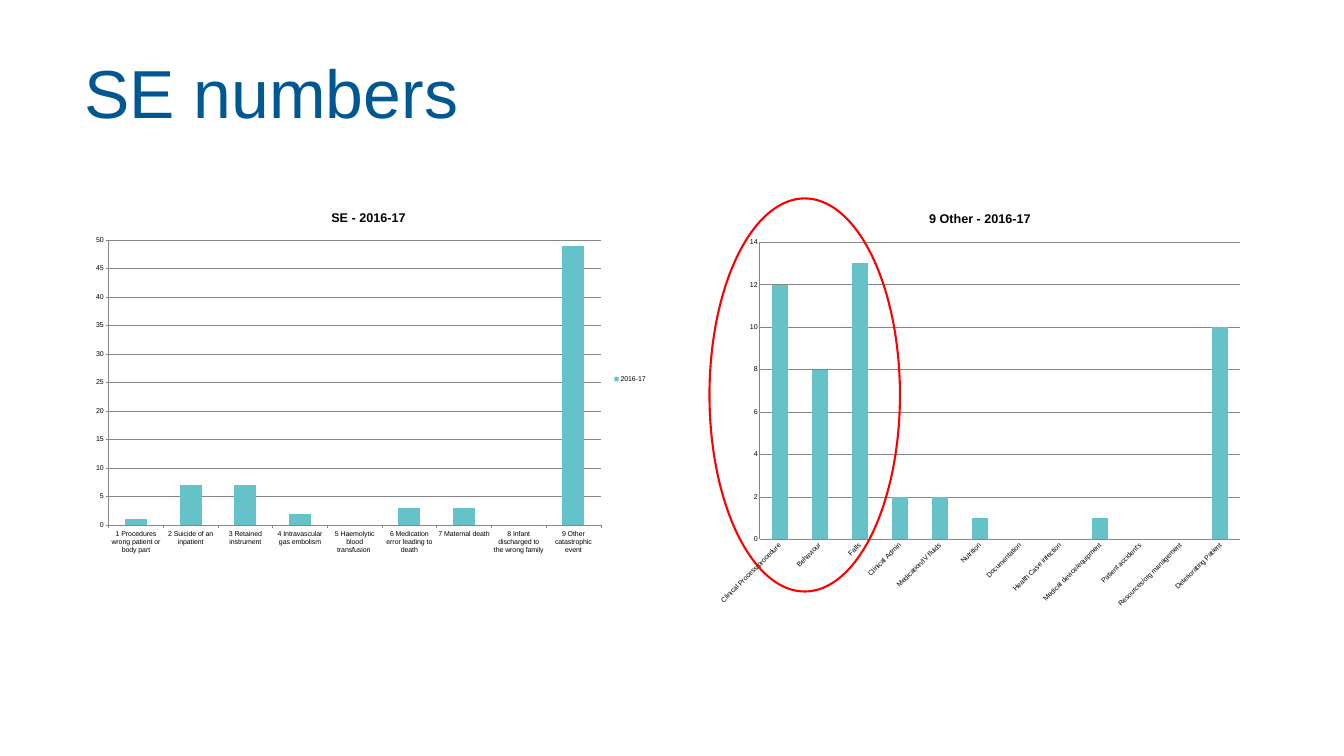
"""Build the SE numbers slide with its two column charts."""
from dataclasses import dataclass

from pptx import Presentation
from pptx.chart.data import CategoryChartData
from pptx.dml.color import RGBColor
from pptx.enum import chart as ch, shapes, text
from pptx.util import Cm, Pt


@dataclass(frozen=True)
class Theme:
    font: str = "Arial"
    heading: RGBColor = RGBColor(0x00, 0x58, 0x92)
    ink: RGBColor = RGBColor(0, 0, 0)
    column: RGBColor = RGBColor(0x64, 0xC2, 0xC8)
    grid: RGBColor = RGBColor(0x86, 0x86, 0x86)
    highlight: RGBColor = RGBColor(0xFF, 0, 0)
    heading_size: Pt = Pt(97)
    heading_leading: Pt = Pt(108)
    chart_title_size: Pt = Pt(18)
    label_size: Pt = Pt(10)
    highlight_width: Pt = Pt(3)


THEME = Theme()
TOP = Cm(9.93)
LEFT = Cm(4.27)

EVENTS = {
    "1 Procedures wrong patient or body part": 1,
    "2 Suicide of an inpatient": 7,
    "3 Retained instrument": 7,
    "4 Intravascular gas embolism": 2,
    "5 Haemolytic blood transfusion ": 0,
    "6 Medication error leading to death": 3,
    "7 Maternal death": 3,
    "8 Infant discharged to the wrong family": 0,
    "9 Other catastrophic event": 49,
}
OTHER_EVENTS = {
    "Clinical Process/procedure": 12,
    "Behaviour": 8,
    "Falls": 13,
    "Clinical Admin": 2,
    "Medication/IV fluids": 2,
    "Nutrition": 1,
    "Documentation": 0,
    "Health Case infection": 0,
    "Medical device/equipment": 1,
    "Patient accident's": 0,
    "Resources/org management": 0,
    "Deteriorating Patient": 10,
}


def style_font(font, size, color, bold=False):
    font.name, font.size, font.bold = THEME.font, size, bold
    font.color.rgb = color


def add_heading(slide, wording):
    heading = slide.shapes.add_textbox(LEFT, Cm(3.12), Cm(58.8), Cm(3.23))
    frame = heading.text_frame
    frame.margin_left = frame.margin_right = 0
    frame.margin_top = frame.margin_bottom = 0
    frame.word_wrap = True
    frame.vertical_anchor = text.MSO_ANCHOR.MIDDLE
    frame.text = wording
    line = frame.paragraphs[0]
    line.line_spacing = THEME.heading_leading
    style_font(line.runs[0].font, THEME.heading_size, THEME.heading)


def style_axis(axis, tick):
    axis.major_tick_mark = tick
    axis.minor_tick_mark = ch.XL_TICK_MARK.NONE
    axis.format.line.color.rgb = THEME.grid
    style_font(axis.tick_labels.font, THEME.label_size, THEME.ink)


def add_column_chart(slide, box, title, series_name, counts, top_value, step, tick):
    data = CategoryChartData()
    data.categories = list(counts)
    data.add_series(series_name, list(counts.values()))
    chart = slide.shapes.add_chart(
        ch.XL_CHART_TYPE.COLUMN_CLUSTERED, *box, data).chart
    style_font(chart.font, THEME.label_size, THEME.ink)

    chart.has_title = True
    chart.chart_title.text_frame.text = title
    title_run = chart.chart_title.text_frame.paragraphs[0].runs[0]
    style_font(title_run.font, THEME.chart_title_size, THEME.ink, bold=True)
    chart.chart_title.include_in_layout = False
    chart.has_legend = False

    plot = chart.plots[0]
    plot.gap_width = 150
    plot.vary_by_categories = False
    columns = plot.series[0]
    columns.invert_if_negative = False
    columns.format.fill.solid()
    columns.format.fill.fore_color.rgb = THEME.column

    for axis in (chart.category_axis, chart.value_axis):
        style_axis(axis, tick)
    values = chart.value_axis
    values.minimum_scale, values.maximum_scale = 0, top_value
    values.major_unit = step
    values.has_major_gridlines = True
    values.major_gridlines.format.line.color.rgb = THEME.grid
    return chart


def add_right_legend(chart):
    chart.has_legend = True
    chart.legend.position = ch.XL_LEGEND_POSITION.RIGHT
    chart.legend.include_in_layout = False
    style_font(chart.legend.font, THEME.label_size, THEME.ink)


def slant_category_labels(chart, degrees):
    body = chart.category_axis._element.txPr.bodyPr
    body.set("rot", str(degrees * 60000))
    body.set("vert", "horz")


def add_highlight(slide, box):
    ring = slide.shapes.add_shape(shapes.MSO_SHAPE.OVAL, *box)
    ring.shadow.inherit = False
    ring.fill.background()
    ring.line.color.rgb = THEME.highlight
    ring.line.width = THEME.highlight_width


def main():
    deck = Presentation()
    deck.slide_width, deck.slide_height = Cm(67.74), Cm(38.1)
    slide = deck.slides.add_slide(deck.slide_layouts[6])

    add_heading(slide, "SE numbers")
    events = add_column_chart(
        slide, (LEFT, TOP, Cm(28.6), Cm(18.34)), "SE - 2016-17", "2016-17",
        EVENTS, 50, 5, ch.XL_TICK_MARK.OUTSIDE)
    add_right_legend(events)
    others = add_column_chart(
        slide, (Cm(35.71), TOP, Cm(27.36), Cm(21.13)), "9 Other - 2016-17",
        "Series 1", OTHER_EVENTS, 14, 2, ch.XL_TICK_MARK.NONE)
    slant_category_labels(others, -45)
    add_highlight(slide, (Cm(35.76), Cm(10), Cm(9.6), Cm(19.81)))

    deck.save("out.pptx")


if __name__ == "__main__":
    main()
